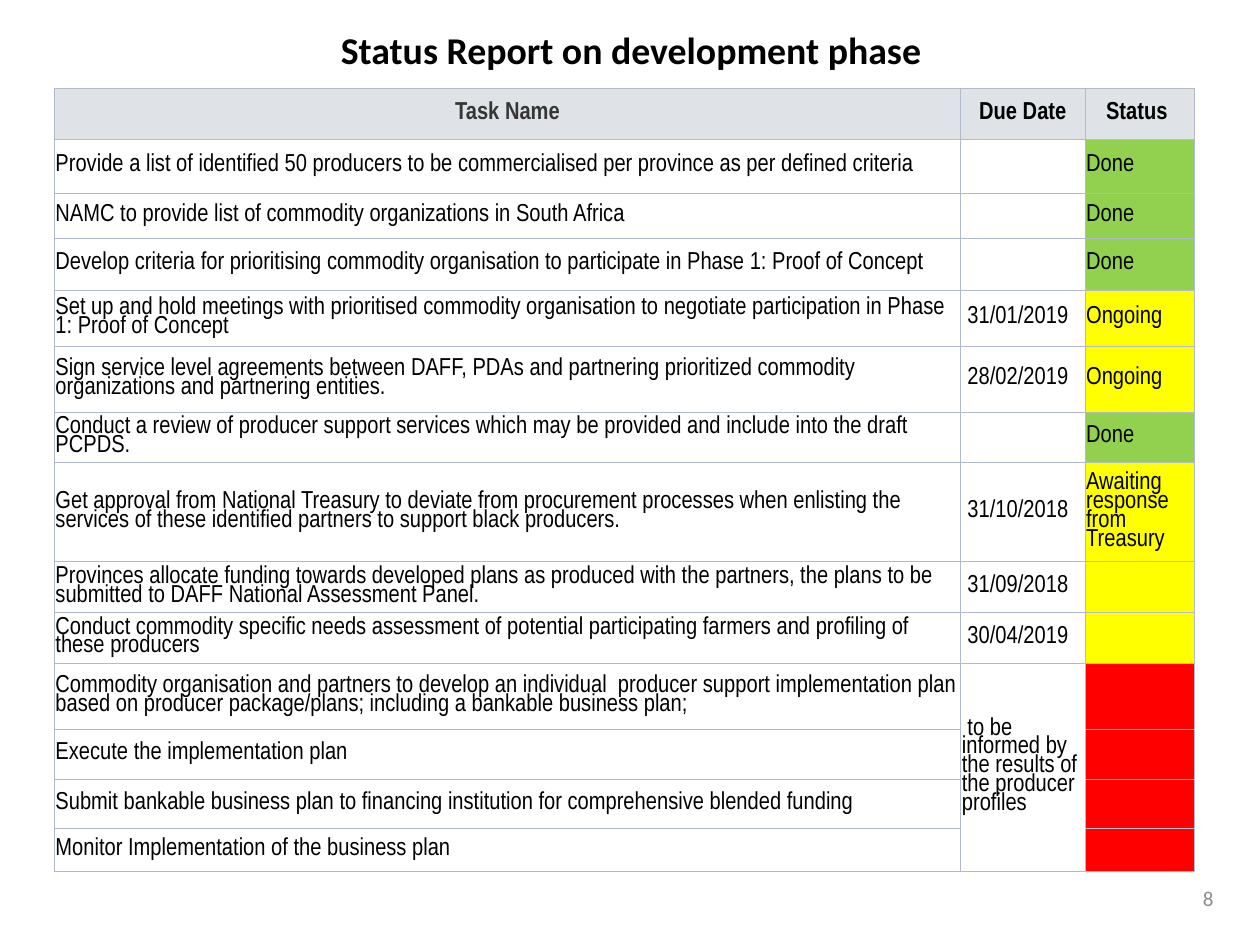
from dataclasses import dataclass
from lxml.etree import SubElement as Sub
from pptx import Presentation
from pptx.dml.color import RGBColor as Rgb
from pptx.enum.text import MSO_ANCHOR as Anchor, PP_ALIGN as Align
from pptx.oxml.ns import qn
from pptx.util import Pt


@dataclass(frozen=True)
class Theme:
    head: str = "Calibri"
    body: str = "Arial Narrow"
    title: float = 21.6
    cell: float = 14
    page: float = 12
    ink: str = "000000"
    task: str = "363636"
    grey: str = "8C8C8C"
    band: str = "DFE3E8"
    white: str = "FFFFFF"
    line: str = "B1BBCC"
    done: str = "92D050"
    wait: str = "FFFF00"
    todo: str = "FF0000"


T = Theme()
COLS = (518, 71, 62.5)
HEAD = (("Task Name", T.task), ("Due Date", T.ink), ("Status ", T.ink))
HEAD_H = 29.1

# Row height, task, due date, status, status colour
ROWS = (
    (30.9, "Provide a list of identified 50 producers to be commercialised "
     "per province as per defined criteria", "", "Done", T.done),
    (25.7, "NAMC to provide list of commodity organizations in South Africa",
     "", "Done", T.done),
    (29.7, "Develop criteria for prioritising commodity organisation to "
     "participate in Phase 1: Proof of Concept", "", "Done", T.done),
    (32, "Set up and hold meetings with prioritised commodity organisation "
     "to negotiate participation in Phase 1: Proof of Concept",
     " 31/01/2019", "Ongoing", T.wait),
    (37.7, "Sign service level agreements between DAFF, PDAs and partnering "
     "prioritized commodity organizations and partnering entities.",
     " 28/02/2019", "Ongoing", T.wait),
    (28, "Conduct a review of producer support services which may be "
     "provided and include into the draft PCPDS.", "", "Done", T.done),
    (53.7, "Get approval from National Treasury to deviate from procurement "
     "processes when enlisting the services of these identified partners to "
     "support black producers.",
     " 31/10/2018", "Awaiting response from Treasury", T.wait),
    (29.1, "Provinces allocate funding towards developed plans as produced "
     "with the partners, the plans to be submitted to DAFF National "
     "Assessment Panel.", " 31/09/2018", "", T.wait),
    (29.1, "Conduct commodity specific needs assessment of potential "
     "participating farmers and profiling of these producers",
     " 30/04/2019", "", T.wait),
    (37.7, "Commodity organisation and partners to develop an individual  "
     "producer support implementation plan based on producer package/plans; "
     "including a bankable business plan;",
     " to be informed by the results of the producer profiles", "", T.todo),
    (28.6, "Execute the implementation plan", "", "", T.todo),
    (28, "Submit bankable business plan to financing institution for "
     "comprehensive blended funding", "", "", T.todo),
    (24.6, "Monitor Implementation of the business plan", "", "", T.todo),
)
MERGE = (10, 13)  # rows that share one due date


def put(obj, vals):
    for key, val in vals.items():
        setattr(obj, key, val)


def write(para, text, color, **font):
    run = para.add_run()
    run.text = text
    put(run.font, font)
    run.font.color.rgb = Rgb.from_string(color)


def label(slide, box, text, color, align, **font):
    frame = slide.shapes.add_textbox(*map(Pt, box)).text_frame
    put(frame, dict(word_wrap=True, vertical_anchor=Anchor.MIDDLE,
                    margin_top=0, margin_bottom=0))
    para = frame.paragraphs[0]
    para.alignment = align
    write(para, text, color, **font)


def edge(cell):
    props = cell._tc.get_or_add_tcPr()
    for pos, side in enumerate(("lnL", "lnR", "lnT", "lnB")):
        line = Sub(props, qn(f"a:{side}"), w=str(Pt(0.5)))
        fill = Sub(line, qn("a:solidFill"))
        Sub(fill, qn("a:srgbClr"), val=T.line)
        props.insert(pos, line)


def dress(cell, text, fill, color=T.ink, bold=False, align=Align.LEFT):
    put(cell, dict(vertical_anchor=Anchor.MIDDLE, margin_left=Pt(0.7),
                   margin_right=Pt(0.7), margin_top=Pt(0.7),
                   margin_bottom=Pt(0.7)))
    cell.fill.solid()
    cell.fill.fore_color.rgb = Rgb.from_string(fill)
    edge(cell)
    para = cell.text_frame.paragraphs[0]
    put(para, dict(alignment=align, line_spacing=0.82))
    para.font.size = Pt(T.cell)
    if text:
        write(para, text, color, name=T.body, size=Pt(T.cell), bold=bold)


def grid(slide, left, top):
    highs = [HEAD_H] + [row[0] for row in ROWS]
    table = slide.shapes.add_table(
        len(highs), len(COLS), Pt(left), Pt(top),
        Pt(sum(COLS)), Pt(sum(highs))).table
    put(table, dict(first_row=False, horz_banding=False))
    for col, wide in zip(table.columns, COLS):
        col.width = Pt(wide)
    for row, high in zip(table.rows, highs):
        row.height = Pt(high)

    # Header
    for col, (text, color) in enumerate(HEAD):
        dress(table.cell(0, col), text, T.band, color, True, Align.CENTER)

    # Tasks
    for num, (_, task, due, state, color) in enumerate(ROWS, 1):
        parts = ((task, T.white), (due, T.white), (state, color))
        for col, (text, fill) in enumerate(parts):
            dress(table.cell(num, col), text, fill)
    first, last = MERGE
    table.cell(first, 1).merge(table.cell(last, 1))


def report(deck):
    slide = deck.slides.add_slide(deck.slide_layouts[6])
    label(slide, (36.7, 15.1, 648, 26), "Status Report on development phase",
          T.ink, Align.CENTER, name=T.head, size=Pt(T.title), bold=True)
    grid(slide, 31, 50.4)
    label(slide, (516, 497, 184.5, 32.4), "8", T.grey, Align.RIGHT,
          name=T.head, size=Pt(T.page))


def main():
    deck = Presentation()
    put(deck, dict(slide_width=Pt(720), slide_height=Pt(540)))
    report(deck)
    deck.save("out.pptx")


if __name__ == "__main__":
    main()
